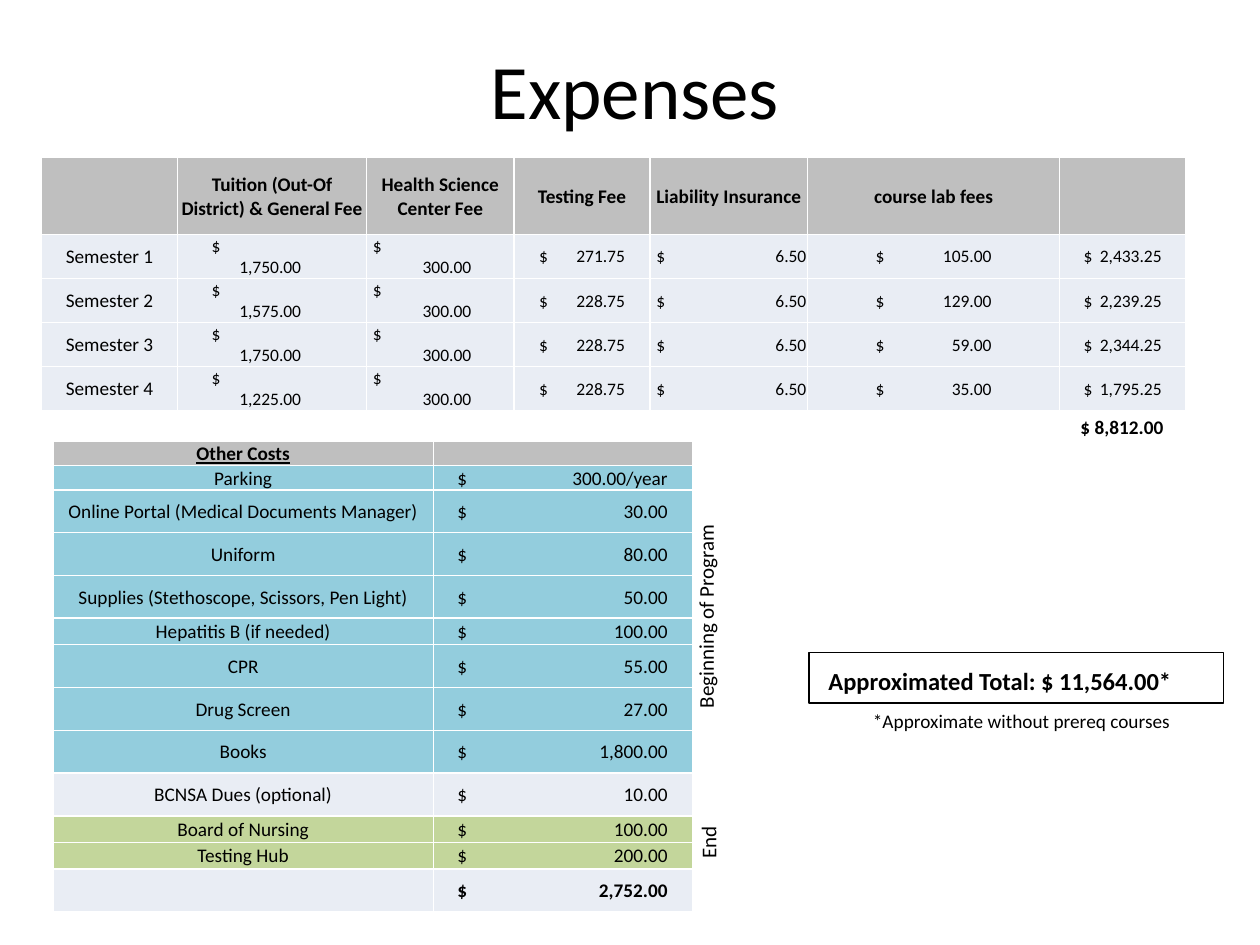
from lxml import etree
from pptx import Presentation
from pptx.dml.color import RGBColor
from pptx.enum.shapes import MSO_SHAPE
from pptx.enum.text import MSO_ANCHOR, PP_ALIGN
from pptx.oxml.ns import qn
from pptx.util import Inches, Pt

LEFT, CENTER = PP_ALIGN.LEFT, PP_ALIGN.CENTER
TOP, MIDDLE = MSO_ANCHOR.TOP, MSO_ANCHOR.MIDDLE
FONT = "Calibri"
GRAY, PALE, BLUE, GREEN = "BFBFBF", "E9EDF4", "93CDDD", "C3D69B"

# Semester fees
FEE_HEADS = ["", "Tuition (Out-Of District) & General Fee",
             "Health Science Center Fee", "Testing Fee",
             "Liability Insurance", "course lab fees", ""]
FEES = [
    ("Semester 1", "1,750.00", "300.00", "271.75", "6.50", "105.00", "2,433.25"),
    ("Semester 2", "1,575.00", "300.00", "228.75", "6.50", "129.00", "2,239.25"),
    ("Semester 3", "1,750.00", "300.00", "228.75", "6.50", "59.00", "2,344.25"),
    ("Semester 4", "1,225.00", "300.00", "228.75", "6.50", "35.00", "1,795.25"),
]
FEE_WIDTHS = [1.08, 1.5, 1.17, 1.08, 1.25, 2, 1]
# Per amount column: dollar sign offset, right edge of amount, amount on own line
FEE_MONEY = [(0.27, 0.98, True), (0.05, 0.83, True), (0.2, 0.88, False),
             (0.05, 1.24, False), (0.54, 1.46, False), (0.19, 0.81, False)]

# Other costs: label, amount, fill, row height
COSTS = [
    ("Parking", "300.00/year", BLUE, 0.19),
    ("Online Portal (Medical Documents Manager)", "30.00", BLUE, 0.34),
    ("Uniform", "80.00", BLUE, 0.34),
    ("Supplies (Stethoscope, Scissors, Pen Light)", "50.00", BLUE, 0.34),
    ("Hepatitis B (if needed)", "100.00", BLUE, 0.21),
    ("CPR", "55.00", BLUE, 0.34),
    ("Drug Screen", "27.00", BLUE, 0.34),
    ("Books", "1,800.00", BLUE, 0.34),
    ("BCNSA Dues (optional)", "10.00", PALE, 0.34),
    ("Board of Nursing", "100.00", GREEN, 0.21),
    ("Testing Hub", "200.00", GREEN, 0.21),
    ("", "2,752.00", PALE, 0.34),
]
COST_WIDTHS = [3.02, 2.06]
COST_MONEY = (0.19, 1.86, False)


def color(value):
    return RGBColor.from_string(value)


def write(frame, text, size=11, bold=False, underline=False, align=LEFT,
          anchor=TOP, tab=None, lead=None):
    """Write lines of text; lead is the size of a space before the first."""
    frame.word_wrap = True
    frame.vertical_anchor = anchor
    for index, line in enumerate(text.split("\n")):
        para = frame.add_paragraph() if index else frame.paragraphs[0]
        para.alignment = align
        if tab:
            stops = etree.SubElement(para._p.get_or_add_pPr(), qn("a:tabLst"))
            etree.SubElement(stops, qn("a:tab"), pos=str(Inches(tab)), algn="r")
        if not line:
            etree.SubElement(para._p, qn("a:endParaRPr"), sz=str(size * 100))
            continue
        spans = [(" ", lead)] if lead else []
        for words, points in spans + [(line, size)]:
            span = para.add_run()
            span.text = words
            span.font.name = FONT
            span.font.size = Pt(points)
            span.font.bold = bold
            span.font.underline = underline
            span.font.color.rgb = color("000000")


def add_text(text, left, top, width, height, rotation=0, **style):
    box = page.shapes.add_textbox(Inches(left), Inches(top),
                                  Inches(width), Inches(height))
    box.rotation = rotation
    write(box.text_frame, text, **style)
    return box


def add_grid(left, top, widths, heights):
    frame = page.shapes.add_table(
        len(heights), len(widths), Inches(left), Inches(top),
        Inches(sum(widths)), Inches(sum(heights)))
    grid = frame.table
    grid.first_row = grid.horz_banding = False
    for column, width in zip(grid.columns, widths):
        column.width = Inches(width)
    for row, height in zip(grid.rows, heights):
        row.height = Inches(height)
    return grid


def fill_cell(cell, text, fill, margin=0.01, **style):
    cell.margin_left = Inches(margin)
    cell.margin_top = cell.margin_right = Inches(0.01)
    cell.margin_bottom = 0
    cell.vertical_anchor = MIDDLE
    cell.fill.solid()
    cell.fill.fore_color.rgb = color(fill)
    properties = cell._tc.get_or_add_tcPr()
    for index, side in enumerate(("lnL", "lnR", "lnT", "lnB")):
        border = etree.Element(qn("a:" + side), w=str(Pt(1)))
        solid = etree.SubElement(border, qn("a:solidFill"))
        etree.SubElement(solid, qn("a:srgbClr"), val="FFFFFF")
        properties.insert(index, border)
    write(cell.text_frame, text, **style)


def fill_money(cell, amount, fill, layout, **style):
    start, end, stacked = layout
    gap = "\n\t" if stacked else "\t"
    fill_cell(cell, "$" + gap + amount, fill, margin=start,
              tab=round(end - start, 2), **style)


deck = Presentation()
deck.slide_width, deck.slide_height = Inches(10), Inches(7.5)
page = deck.slides.add_slide(deck.slide_layouts[6])

add_text("Expenses", 0.54, 0.08, 9, 1.25, size=44, align=CENTER, anchor=MIDDLE)

# Semester fee table
fees = add_grid(0.33, 1.25, FEE_WIDTHS, [0.61] + [0.35] * len(FEES))
for column, head in enumerate(FEE_HEADS):
    fill_cell(fees.cell(0, column), head, GRAY, bold=True, align=CENTER)
for row, (semester, *amounts) in enumerate(FEES, 1):
    fill_cell(fees.cell(row, 0), semester, PALE, align=CENTER)
    for column, (amount, layout) in enumerate(zip(amounts, FEE_MONEY), 1):
        fill_money(fees.cell(row, column), amount, PALE, layout, size=10)

# Other costs table
costs = add_grid(0.42, 3.5, COST_WIDTHS, [0.19] + [cost[3] for cost in COSTS])
fill_cell(costs.cell(0, 0), "Other Costs", GRAY, bold=True, underline=True,
          align=CENTER)
fill_cell(costs.cell(0, 1), "", GRAY)
for row, (label, amount, fill, height) in enumerate(COSTS, 1):
    fill_cell(costs.cell(row, 0), label, fill, align=CENTER)
    fill_money(costs.cell(row, 1), amount, fill, COST_MONEY, bold=not label)

# Totals
add_text("$ 8,812.00", 8.42, 3.15, 0.99, 0.4, bold=True, lead=18)
total = page.shapes.add_shape(MSO_SHAPE.RECTANGLE, Inches(6.42), Inches(5.18),
                              Inches(3.29), Inches(0.4))
total.shadow.inherit = False
total.fill.background()
total.line.color.rgb = color("000000")
total.line.width = Pt(0.75)
write(total.text_frame, "Approximated Total: $ 11,564.00*", size=14,
      bold=True, lead=18)
add_text("*Approximate without prereq courses", 6.83, 5.58, 3.67, 0.29)

# Timing labels beside the costs
add_text("Beginning of Program", 4.58, 4.55, 2.04, 0.3, rotation=270, size=12)
add_text("End", 5.33, 6.47, 0.58, 0.3, rotation=270, size=12)

deck.save("out.pptx")
